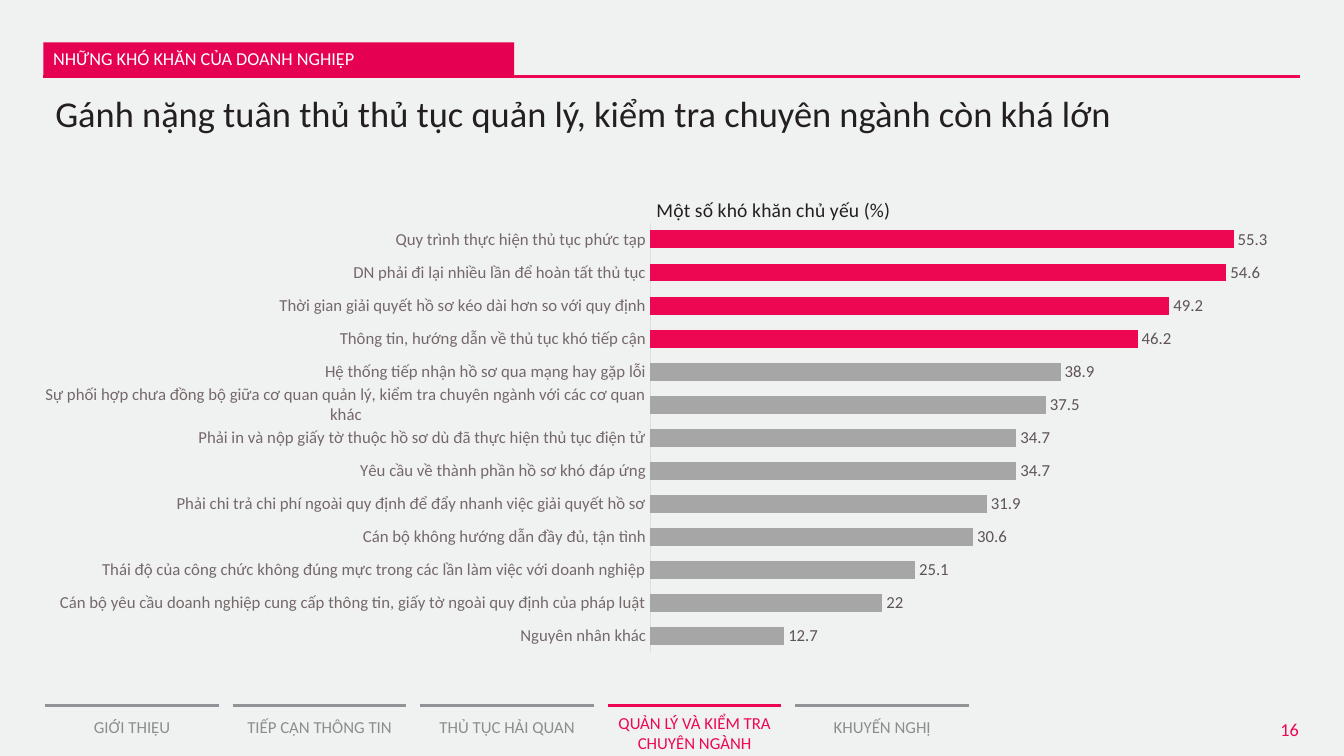
from lxml import etree
from pptx import Presentation
from pptx import util as u
from pptx.chart.data import CategoryChartData
from pptx.dml.color import RGBColor
from pptx.enum import chart as ch, shapes, text
from pptx.oxml import parse_xml
from pptx.oxml.ns import nsdecls, qn

PX = 9144  # EMU in one px, 100 px to the inch
FONT = "Calibri"
COLORS = {
    "bg": "F0F2F1", "accent": "ED0753", "banner": "E50051", "white": "FFFFFF",
    "dark": "231F20", "tab": "8D8D8D", "tab_line": "919396", "bar": "A6A6A6",
    "axis": "E0DCDD", "category": "75686B", "value": "5E5356",
}
TABS = ["GIỚI THIỆU", "TIẾP CẬN THÔNG TIN", "THỦ TỤC HẢI QUAN",
        "QUẢN LÝ VÀ KIỂM TRA CHUYÊN NGÀNH", "KHUYẾN NGHỊ"]
ACTIVE_TAB = 3
TAB_LEFT, TAB_TOP, TAB_STEP, TAB_WIDTH = 45, 700, 186, 172
# Bars from top to bottom
DIFFICULTIES = [
    ("Quy trình thực hiện thủ tục phức tạp", 55.3),
    ("DN phải đi lại nhiều lần để hoàn tất thủ tục", 54.6),
    ("Thời gian giải quyết hồ sơ kéo dài hơn so với quy định", 49.2),
    ("Thông tin, hướng dẫn về thủ tục khó tiếp cận", 46.2),
    ("Hệ thống tiếp nhận hồ sơ qua mạng hay gặp lỗi", 38.9),
    ("Sự phối hợp chưa đồng bộ giữa cơ quan quản lý, kiểm tra chuyên ngành "
     "với các cơ quan khác", 37.5),
    ("Phải in và nộp giấy tờ thuộc hồ sơ dù đã thực hiện thủ tục điện tử", 34.7),
    ("Yêu cầu về thành phần hồ sơ khó đáp ứng", 34.7),
    ("Phải chi trả chi phí ngoài quy định để đẩy nhanh việc giải quyết hồ sơ", 31.9),
    ("Cán bộ không hướng dẫn đầy đủ, tận tình", 30.6),
    ("Thái độ của công chức không đúng mực trong các lần làm việc với doanh nghiệp", 25.1),
    ("Cán bộ yêu cầu doanh nghiệp cung cấp thông tin, giấy tờ ngoài quy định "
     "của pháp luật", 22),
    ("Nguyên nhân khác", 12.7),
]
HIGHLIGHTED = 4


def px(*lengths):
    return [u.Emu(n * PX) for n in lengths]


def rgb(name):
    return RGBColor.from_string(COLORS[name])


def set_attrs(obj, **values):
    for name, value in values.items():
        setattr(obj, name, value)


def set_font(font, size, color):
    set_attrs(font, name=FONT, size=u.Pt(size), bold=False)
    font.color.rgb = rgb(color)


def write(sp, words, size, color, anchor="MIDDLE", align="LEFT", spacing=1.0, side=10):
    tf = sp.text_frame
    margin_x, margin_y = px(side, 5)
    set_attrs(tf, word_wrap=True, vertical_anchor=getattr(text.MSO_ANCHOR, anchor),
              margin_left=margin_x, margin_right=margin_x,
              margin_top=margin_y, margin_bottom=margin_y)
    p = tf.paragraphs[0]
    set_attrs(p, alignment=getattr(text.PP_ALIGN, align), line_spacing=spacing)
    r = p.add_run()
    r.text = words
    set_font(r.font, size, color)


def add_text(s, box, words, size, color, **layout):
    write(s.shapes.add_textbox(*px(*box)), words, size, color, **layout)


def add_banner(s, box, words):
    sp = s.shapes.add_shape(shapes.MSO_SHAPE.RECTANGLE, *px(*box))
    sp.shadow.inherit = False
    sp.fill.solid()
    sp.fill.fore_color.rgb = rgb("banner")
    sp.line.fill.background()
    write(sp, words, 13, "white", spacing=0.9)


def add_rule(s, x1, x2, y, color):
    ln = s.shapes.add_connector(shapes.MSO_CONNECTOR.STRAIGHT, *px(x1, y, x2, y))
    ln.line.color.rgb = rgb(color)
    ln.line.width = u.Pt(2)
    etree.SubElement(ln._element.spPr, qn("a:effectLst"))


def add_tabs(s):
    for i, name in enumerate(TABS):
        active = i == ACTIVE_TAB
        x = TAB_LEFT + i * TAB_STEP
        y = TAB_TOP + (6 if active else 0)
        add_text(s, (x, y, TAB_WIDTH, 42), name, 12, "accent" if active else "tab",
                 align="CENTER", side=5)
        add_rule(s, x, x + TAB_WIDTH, TAB_TOP, "accent" if active else "tab_line")


def manual_layout(x, y, w=None, h=None):
    inner = '<c:layoutTarget val="inner"/>' if w else ""
    sizes = f'<c:w val="{w}"/><c:h val="{h}"/>' if w else ""
    return parse_xml(
        f'<c:layout {nsdecls("c")}><c:manualLayout>{inner}<c:xMode val="edge"/>'
        f'<c:yMode val="edge"/><c:x val="{x}"/><c:y val="{y}"/>{sizes}'
        "</c:manualLayout></c:layout>")


def place(element, layout, index):
    for old in element.findall(qn("c:layout")):
        element.remove(old)
    element.insert(index, layout)


def add_difficulty_chart(s, box):
    rows = DIFFICULTIES[::-1]
    data = CategoryChartData()
    data.categories = [name for name, _ in rows]
    data.add_series("Series 1", [value for _, value in rows])
    chart = s.shapes.add_chart(ch.XL_CHART_TYPE.BAR_CLUSTERED, *px(*box), data).chart
    set_font(chart.font, 10, "dark")
    chart.has_legend = False

    # Title
    chart.has_title = True
    p = chart.chart_title.text_frame.paragraphs[0]
    r = p.add_run()
    r.text = "Một số khó khăn chủ yếu (%)"
    set_font(r.font, 14, "dark")
    place(chart.chart_title._element, manual_layout(0.49, 0.02), 1)
    place(chart._chartSpace.chart.plotArea, manual_layout(0.488, 0.083, 0.512, 0.901), 0)

    # Axes
    cat, val = chart.category_axis, chart.value_axis
    tick = ch.XL_TICK_MARK.NONE
    set_attrs(cat, major_tick_mark=tick, minor_tick_mark=tick, has_major_gridlines=False)
    set_font(cat.tick_labels.font, 12, "category")
    cat.format.line.color.rgb = rgb("axis")
    cat.format.line.width = u.Pt(0.75)
    set_attrs(val, minimum_scale=0, maximum_scale=60, has_major_gridlines=False, visible=False)

    # Bars and their values
    plot = chart.plots[0]
    set_attrs(plot, gap_width=84, vary_by_categories=False, has_data_labels=True)
    set_attrs(plot.data_labels, show_value=True, position=ch.XL_LABEL_POSITION.OUTSIDE_END)
    set_font(plot.data_labels.font, 12, "value")
    series = plot.series[0]
    first_accent = len(rows) - HIGHLIGHTED
    fills = [(series, "bar")]
    fills += [(series.points[i], "accent") for i in range(first_accent, len(rows))]
    for part, color in fills:
        part.format.fill.solid()
        part.format.fill.fore_color.rgb = rgb(color)


def main():
    prs = Presentation()
    prs.slide_width, prs.slide_height = px(1333, 750)
    s = prs.slides.add_slide(prs.slide_layouts[6])
    s.background.fill.solid()
    s.background.fill.fore_color.rgb = rgb("bg")

    # Footer
    add_text(s, (1215, 703, 83, 36), "16", 13, "accent", anchor="BOTTOM", align="RIGHT")
    add_tabs(s)

    # Header
    add_rule(s, 43, 1289, 76, "accent")
    add_banner(s, (43, 42, 467, 35), "NHỮNG KHÓ KHĂN CỦA DOANH NGHIỆP")
    add_text(s, (45, 90, 1244, 92),
             "Gánh nặng tuân thủ thủ tục quản lý, kiểm tra chuyên ngành còn khá lớn",
             26, "dark", anchor="TOP", spacing=0.9)

    # Chart
    add_difficulty_chart(s, (45, 182, 1228, 473))
    prs.save("out.pptx")


if __name__ == "__main__":
    main()
